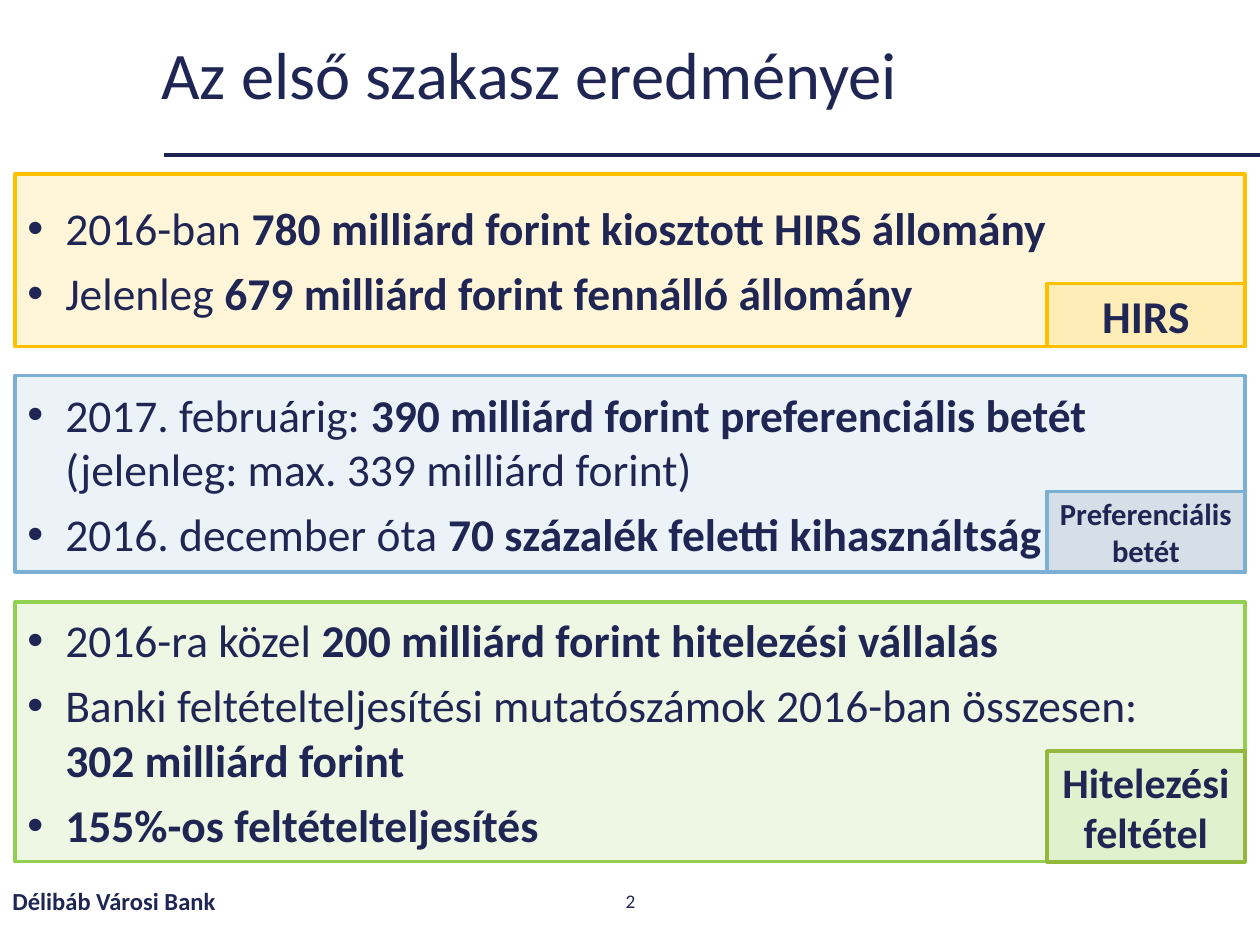
"""Build the slide that sums up the results of the first phase."""
from dataclasses import dataclass

from lxml.etree import SubElement
from pptx import Presentation
from pptx.dml.color import RGBColor
from pptx.enum.shapes import MSO_CONNECTOR as Connector, MSO_SHAPE as Shape
from pptx.enum.text import MSO_ANCHOR as Anchor, MSO_AUTO_SIZE as AutoSize, PP_ALIGN as Align
from pptx.oxml.ns import qn
from pptx.util import Inches, Pt


@dataclass(frozen=True)
class Theme:
    """Colours, font and type sizes."""
    font: str = "Calibri"
    ink: str = "202653"
    rule: str = "1E2452"
    gold: str = "FFC000"
    blue: str = "7BAFD4"
    green: str = "92D050"
    olive: str = "92B93B"
    title: float = 38
    body: float = 26
    footer: float = 14
    number: float = 11
    border: float = 2


@dataclass(frozen=True)
class Area:
    """A place on the grid in columns and rows."""
    col: float
    row: float
    cols: float
    rows: float

    def lengths(self) -> tuple:
        """Return left, top, width and height as slide lengths."""
        return tuple(Inches(CELL * n) for n in (self.col, self.row, self.cols, self.rows))


@dataclass(frozen=True)
class Badge:
    """The label in the lower right corner of a panel."""
    label: str
    rows: float
    size: float
    fill: str
    line: str
    opacity: int = 15


@dataclass(frozen=True)
class Panel:
    """A tinted block of bullets with its badge."""
    row: float
    rows: float
    colour: str
    bullets: tuple
    badge: Badge


CELL = 0.1
COLUMNS, ROWS = 100, 75
PANEL_COL, PANEL_COLS, BADGE_COLS = 1.2, 97.6, 15.7
FOOTER_ROW, FOOTER_ROWS = 69.5, 4
THEME = Theme()

PANELS = (
    Panel(13.8, 13.7, THEME.gold,
          ("2016-ban **780 milliárd forint kiosztott HIRS állomány**",
           "Jelenleg **679 milliárd forint fennálló állomány**"),
          Badge("HIRS", 5, THEME.body, THEME.gold, THEME.gold)),
    Panel(29.8, 15.6, THEME.blue,
          ("2017. februárig: **390 milliárd forint preferenciális betét **"
           "(jelenleg: max. 339 milliárd forint)",
           "2016. december óta **70 százalék feletti kihasználtság**"),
          Badge("Preferenciális betét", 6.4, 17.5, THEME.ink, THEME.blue, 10)),
    Panel(47.8, 20.6, THEME.green,
          ("2016-ra közel **200 milliárd forint hitelezési vállalás**",
           "Banki feltételteljesítési mutatószámok 2016-ban összesen:\n**302 milliárd forint**",
           "**155%-os feltételteljesítés**"),
          Badge("Hitelezési feltétel", 8.8, 24, THEME.green, THEME.olive)),
)


def rgb(colour: str) -> RGBColor:
    """Turn a hex string into a colour."""
    return RGBColor.from_string(colour)


def add_bullet(paragraph) -> None:
    """Give a paragraph a hanging round bullet."""
    properties = paragraph._p.get_or_add_pPr()
    properties.set("marL", str(Inches(0.3)))
    properties.set("indent", str(Inches(-0.3)))
    SubElement(properties, qn("a:buFont"), typeface="Arial")
    SubElement(properties, qn("a:buChar"), char="•")


def write(frame, *texts: str, size: float, bold: bool = False, align=Align.LEFT,
          after: float = 0, spacing: float = 1.0, bullets: bool = False, inset: float = 0.1) -> None:
    """Fill a text frame, where double asterisks switch bold on and off."""
    frame.word_wrap = True
    frame.auto_size = AutoSize.NONE
    frame.vertical_anchor = Anchor.MIDDLE
    frame.margin_left = frame.margin_right = Inches(inset)
    for index, text in enumerate(texts):
        paragraph = frame.add_paragraph() if index else frame.paragraphs[0]
        paragraph.alignment = align
        paragraph.line_spacing = spacing
        paragraph.space_before, paragraph.space_after = Pt(0), Pt(after)
        if bullets:
            add_bullet(paragraph)
        for part, segment in enumerate(text.split("**")):
            for line, words in enumerate(segment.split("\n")):
                if line:
                    paragraph.add_line_break()
                if words:
                    run = paragraph.add_run()
                    run.text = words
                    run.font.name, run.font.size = THEME.font, Pt(size)
                    run.font.bold = bold or part % 2 == 1
                    run.font.color.rgb = rgb(THEME.ink)


def draw_block(slide, area: Area, fill: str, line: str, opacity: int):
    """Draw a tinted, outlined rectangle and return its text frame."""
    block = slide.shapes.add_shape(Shape.RECTANGLE, *area.lengths())
    block.shadow.inherit = False
    block.fill.solid()
    block.fill.fore_color.rgb = rgb(fill)
    tint = block._element.spPr.find(qn("a:solidFill"))[0]
    SubElement(tint, qn("a:alpha"), val=str(opacity * 1000))
    block.line.color.rgb = rgb(line)
    block.line.width = Pt(THEME.border)
    return block.text_frame


def draw_panel(slide, panel: Panel) -> None:
    """Draw a panel with its bullets."""
    area = Area(PANEL_COL, panel.row, PANEL_COLS, panel.rows)
    write(draw_block(slide, area, panel.colour, panel.colour, 15), *panel.bullets,
          size=THEME.body, after=6, bullets=True)


def draw_badge(slide, panel: Panel) -> None:
    """Draw the badge in the corner of its panel."""
    badge = panel.badge
    area = Area(PANEL_COL + PANEL_COLS - BADGE_COLS, panel.row + panel.rows - badge.rows,
                BADGE_COLS, badge.rows)
    write(draw_block(slide, area, badge.fill, badge.line, badge.opacity), badge.label,
          size=badge.size, bold=True, align=Align.CENTER, after=6, inset=0.05)


def draw_heading(slide, text: str) -> None:
    """Place the title and the rule below it."""
    rule = slide.shapes.add_connector(
        Connector.STRAIGHT, *(Inches(CELL * n) for n in (13, 12.3, COLUMNS, 12.3)))
    rule.line.color.rgb = rgb(THEME.rule)
    rule.line.width = Pt(2.25)
    SubElement(rule._element.spPr, qn("a:effectLst"))
    title = slide.shapes.title
    title.left, title.top, title.width, title.height = Area(11.8, 2, 81.9, 8.3).lengths()
    write(title.text_frame, text, size=THEME.title, spacing=0.9)


def draw_footer(slide, col: float, cols: float, text: str, **style) -> None:
    """Write one part of the footer."""
    area = Area(col, FOOTER_ROW, cols, FOOTER_ROWS)
    write(slide.shapes.add_textbox(*area.lengths()).text_frame, text, **style)


def main() -> None:
    """Build and save the presentation."""
    deck = Presentation()
    deck.slide_width, deck.slide_height = Inches(CELL * COLUMNS), Inches(CELL * ROWS)
    slide = deck.slides.add_slide(deck.slide_layouts.get_by_name("Title Only"))
    draw_heading(slide, "Az első szakasz eredményei")
    draw_footer(slide, 0, 33.8, "Délibáb Városi Bank", size=THEME.footer, bold=True)
    draw_footer(slide, 38.8, 22.5, "2", size=THEME.number, align=Align.CENTER)
    for draw in (draw_panel, draw_badge):
        for panel in PANELS:
            draw(slide, panel)
    deck.save("out.pptx")


if __name__ == "__main__":
    main()
